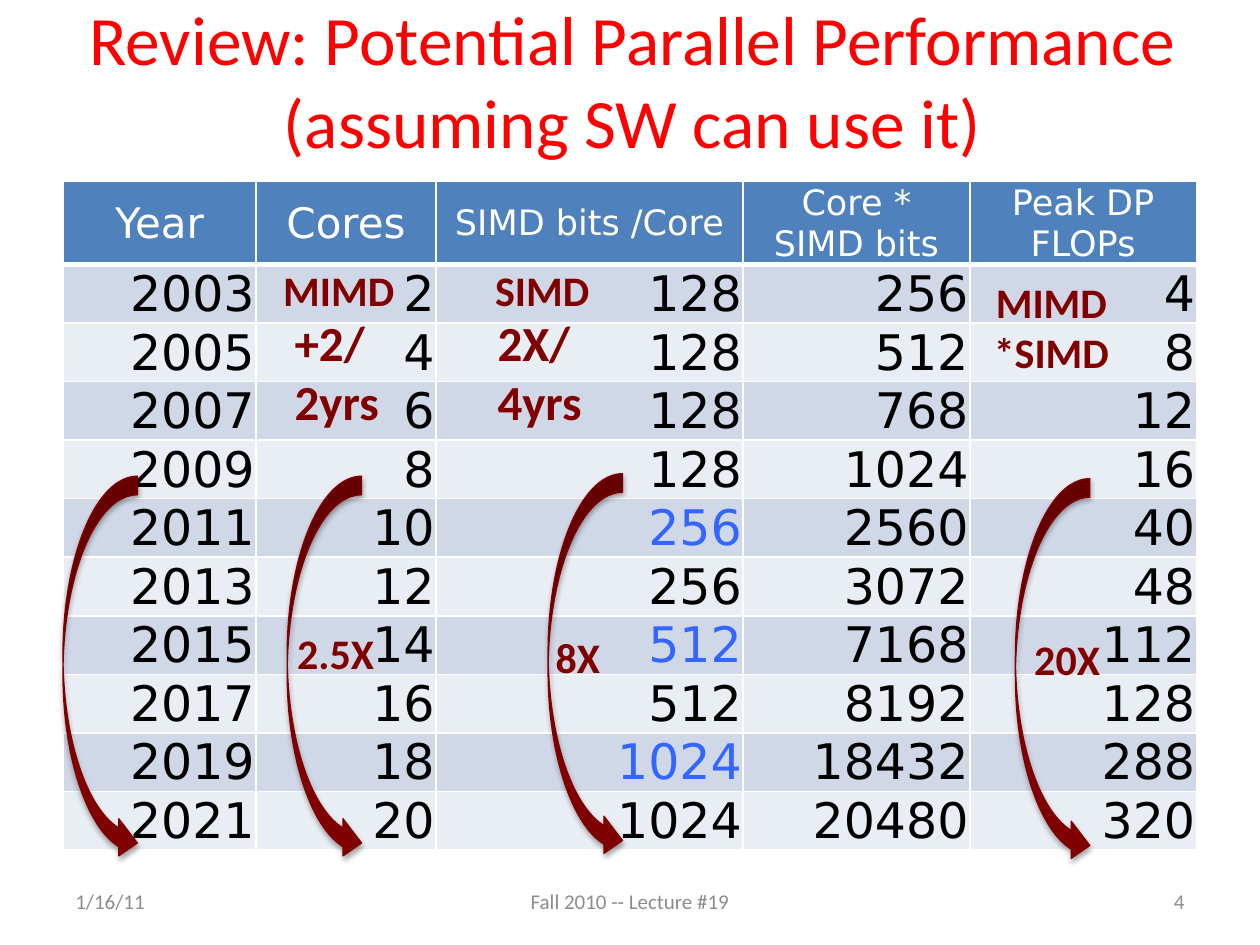
from dataclasses import dataclass
from typing import Optional

from lxml.etree import SubElement, fromstring
from pptx import Presentation
from pptx.dml.color import RGBColor
from pptx.enum.shapes import MSO_SHAPE
from pptx.enum.text import MSO_ANCHOR, MSO_AUTO_SIZE, PP_ALIGN
from pptx.oxml.ns import qn
from pptx.util import Cm, Pt

RED = RGBColor(0xFF, 0x00, 0x00)
MAROON = RGBColor(0x80, 0x00, 0x00)
GRAY = RGBColor(0x8C, 0x8C, 0x8C)
BLUE = RGBColor(0x33, 0x66, 0xFF)
BLACK = RGBColor(0x00, 0x00, 0x00)
WHITE = RGBColor(0xFF, 0xFF, 0xFF)
HEADER_FILL = RGBColor(0x4F, 0x81, 0xBD)
BAND_FILLS = (RGBColor(0xD0, 0xD8, 0xE8), RGBColor(0xE9, 0xED, 0xF4))

BODY_FONT = "Calibri"
TABLE_FONT = "DejaVu Sans"
DRAWING_NS = "http://schemas.openxmlformats.org/drawingml/2006/main"
ARROW_SHADOW = (
    f'<a:effectLst xmlns:a="{DRAWING_NS}">'
    '<a:outerShdw blurRad="39370" dist="22860" dir="5400000" rotWithShape="0">'
    '<a:srgbClr val="000000"><a:alpha val="35000"/></a:srgbClr>'
    "</a:outerShdw></a:effectLst>"
)


@dataclass
class Label:
    lines: tuple[str, ...]
    left: float
    top: float
    width: float
    height: float
    size: float = 24
    color: RGBColor = MAROON
    bold: bool = True
    align: PP_ALIGN = PP_ALIGN.LEFT
    anchor: MSO_ANCHOR = MSO_ANCHOR.TOP
    wrap: bool = False
    line_breaks: bool = False


@dataclass
class GrowthArrow:
    left: float
    top: float
    factor: Optional[Label] = None


@dataclass
class Column:
    lines: tuple[str, ...]
    width: float
    size: float


COLUMNS = [
    Column(("Year",), 3.89, 24),
    Column(("Cores",), 3.63, 24),
    Column(("SIMD bits /Core",), 6.19, 20),
    Column(("Core *", "SIMD bits"), 4.57, 20),
    Column(("Peak DP FLOPs",), 4.57, 20),
]
ROWS = [
    (2003, 2, 128, 256, 4),
    (2005, 4, 128, 512, 8),
    (2007, 6, 128, 768, 12),
    (2009, 8, 128, 1024, 16),
    (2011, 10, 256, 2560, 40),
    (2013, 12, 256, 3072, 48),
    (2015, 14, 512, 7168, 112),
    (2017, 16, 512, 8192, 128),
    (2019, 18, 1024, 18432, 288),
    (2021, 20, 1024, 20480, 320),
]
SIMD_COLUMN = 2

FOOTER = dict(top=17.65, height=1.02, size=12, color=GRAY, bold=False,
              anchor=MSO_ANCHOR.MIDDLE, wrap=True)
FOOTERS = [
    Label(("1/16/11",), left=1.27, width=5.93, **FOOTER),
    Label(("Fall 2010 -- Lecture #19",), left=8.68, width=8.04,
          align=PP_ALIGN.CENTER, **FOOTER),
    Label(("4",), left=18.2, width=5.93, align=PP_ALIGN.RIGHT, **FOOTER),
]
ARROWS = [
    GrowthArrow(1.27, 9.6),
    GrowthArrow(5.79, 9.6, Label(("2.5X",), 5.74, 12.52, 2.08, 1.27)),
    GrowthArrow(11.05, 9.55, Label(("8X",), 10.95, 12.6, 1.42, 1.27)),
    GrowthArrow(20.47, 9.65, Label(("20X",), 20.6, 12.65, 1.85, 1.27)),
]
LABELS = [
    Label(("MIMD",), 5.46, 5.21, 2.77, 1.27),
    Label(("SIMD",), 9.73, 5.21, 2.44, 1.27),
    Label(("MIMD", "*SIMD"), 19.76, 5.44, 2.87, 2.31,
          align=PP_ALIGN.CENTER, line_breaks=True),
    Label(("+2/", "2yrs"), 5.69, 6.17, 2.24, 2.64, size=28),
    Label(("2X/", "4yrs"), 9.78, 6.17, 2.24, 2.64, size=28),
]


def add_run(p, text: str, font: str, size: float, color: RGBColor, bold: bool = False) -> None:
    r = p.add_run()
    r.text = text
    r.font.name = font
    r.font.size = Pt(size)
    r.font.bold = bold
    r.font.color.rgb = color


def add_label(shapes, label: Label) -> None:
    sp = shapes.add_textbox(Cm(label.left), Cm(label.top), Cm(label.width), Cm(label.height))
    tf = sp.text_frame
    tf.word_wrap = label.wrap
    tf.vertical_anchor = label.anchor
    tf.auto_size = MSO_AUTO_SIZE.NONE if label.wrap else MSO_AUTO_SIZE.SHAPE_TO_FIT_TEXT
    p = tf.paragraphs[0]
    for i, line in enumerate(label.lines):
        if i and label.line_breaks:
            p.add_line_break()
        elif i:
            p = tf.add_paragraph()
        p.alignment = label.align
        add_run(p, line, BODY_FONT, label.size, label.color, label.bold)


def add_growth_arrow(shapes, arrow: GrowthArrow) -> None:
    if arrow.factor:
        shapes = shapes.add_group_shape().shapes
    sp = shapes.add_shape(MSO_SHAPE.CURVED_RIGHT_ARROW, Cm(arrow.left), Cm(arrow.top),
                          Cm(1.5), Cm(7.77))
    sp.fill.solid()
    sp.fill.fore_color.rgb = MAROON
    sp.line.color.rgb = MAROON
    sp.line.width = Pt(0.75)
    sp._element.spPr.append(fromstring(ARROW_SHADOW))
    if arrow.factor:
        add_label(shapes, arrow.factor)


def set_borders(cell, top: float, bottom: float) -> None:
    tcPr = cell._tc.get_or_add_tcPr()
    for side, width in (("L", 1), ("R", 1), ("T", top), ("B", bottom)):
        ln = SubElement(tcPr, qn(f"a:ln{side}"), w=str(Pt(width)))
        fill = SubElement(ln, qn("a:solidFill"))
        SubElement(fill, qn("a:srgbClr"), val=str(WHITE))


def format_cell(cell, fill: RGBColor, anchor: MSO_ANCHOR, top: float, bottom: float) -> None:
    set_borders(cell, top, bottom)
    cell.fill.solid()
    cell.fill.fore_color.rgb = fill
    cell.vertical_anchor = anchor
    cell.margin_left = cell.margin_right = cell.margin_top = Cm(0.03)
    cell.margin_bottom = 0


def add_performance_table(shapes) -> None:
    header_height, row_height = 1.64, 1.18
    width = sum(column.width for column in COLUMNS)
    height = header_height + row_height * len(ROWS)
    table = shapes.add_table(len(ROWS) + 1, len(COLUMNS), Cm(1.27), Cm(3.66),
                             Cm(width), Cm(height)).table
    table.first_row = table.horz_banding = False
    for c, column in enumerate(COLUMNS):
        table.columns[c].width = Cm(column.width)
        cell = table.cell(0, c)
        format_cell(cell, HEADER_FILL, MSO_ANCHOR.MIDDLE, 1, 3)
        p = cell.text_frame.paragraphs[0]
        p.alignment = PP_ALIGN.CENTER
        for i, line in enumerate(column.lines):
            if i:
                p.add_line_break()
            add_run(p, line, TABLE_FONT, column.size, WHITE)
    table.rows[0].height = Cm(header_height)
    for n, values in enumerate(ROWS):
        table.rows[n + 1].height = Cm(row_height)
        for c, value in enumerate(values):
            cell = table.cell(n + 1, c)
            format_cell(cell, BAND_FILLS[n % 2], MSO_ANCHOR.BOTTOM, 1 if n else 3, 1)
            p = cell.text_frame.paragraphs[0]
            p.alignment = PP_ALIGN.RIGHT
            doubled = c == SIMD_COLUMN and n > 0 and value > ROWS[n - 1][c]
            add_run(p, str(value), TABLE_FONT, 28, BLUE if doubled else BLACK)


def main() -> None:
    prs = Presentation()
    prs.slide_width, prs.slide_height = Cm(25.4), Cm(19.05)
    s = prs.slides.add_slide(prs.slide_layouts[5])
    title = s.shapes.title
    title.left, title.top, title.width, title.height = Cm(1.32), 0, Cm(22.86), Cm(3.18)
    tf = title.text_frame
    tf.auto_size = MSO_AUTO_SIZE.NONE
    tf.vertical_anchor = MSO_ANCHOR.MIDDLE
    p = tf.paragraphs[0]
    p.alignment = PP_ALIGN.CENTER
    add_run(p, "Review: Potential Parallel Performance (assuming SW can use it)",
            BODY_FONT, 39.6, RED)
    add_performance_table(s.shapes)
    for footer in FOOTERS:
        add_label(s.shapes, footer)
    for arrow in ARROWS:
        add_growth_arrow(s.shapes, arrow)
    for label in LABELS:
        add_label(s.shapes, label)
    prs.save("out.pptx")


if __name__ == "__main__":
    main()
